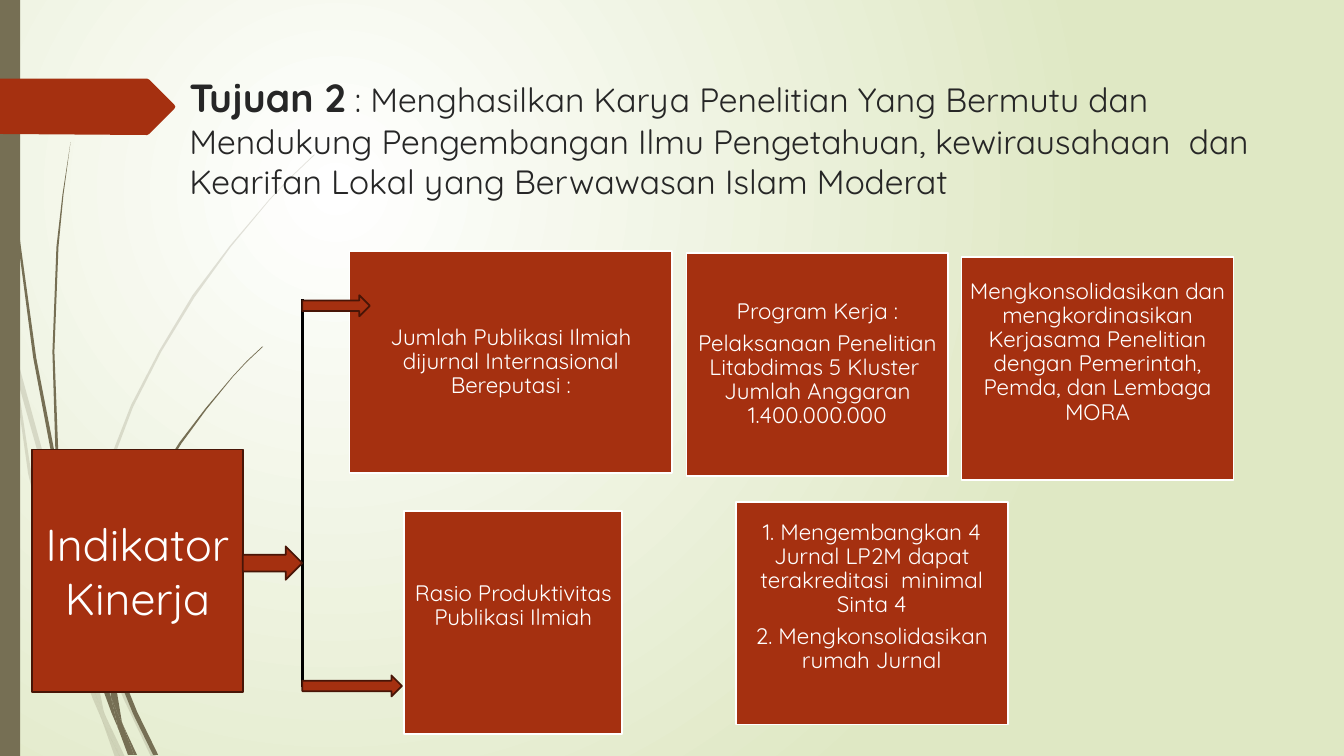
from dataclasses import dataclass

from lxml import etree
from pptx import Presentation
from pptx.dml.color import RGBColor
from pptx.enum.shapes import MSO_CONNECTOR, MSO_SHAPE
from pptx.enum.text import MSO_ANCHOR, MSO_AUTO_SIZE, PP_ALIGN
from pptx.oxml.ns import qn
from pptx.util import Cm, Pt

RECTANGLE, RIGHT_ARROW = MSO_SHAPE.RECTANGLE, MSO_SHAPE.RIGHT_ARROW
STRAIGHT = MSO_CONNECTOR.STRAIGHT
TOP, MIDDLE = MSO_ANCHOR.TOP, MSO_ANCHOR.MIDDLE
LEFT, CENTER = PP_ALIGN.LEFT, PP_ALIGN.CENTER
NO_FIT = MSO_AUTO_SIZE.NONE


@dataclass(frozen=True)
class Theme:
    font: str = "Quicksand"
    rust: RGBColor = RGBColor(0xA5, 0x30, 0x10)
    dark_rust: RGBColor = RGBColor(0x48, 0x15, 0x07)
    olive: RGBColor = RGBColor(0x76, 0x6F, 0x54)
    pale_green: RGBColor = RGBColor(0xDF, 0xE8, 0xC4)
    white: RGBColor = RGBColor(0xFF, 0xFF, 0xFF)
    black: RGBColor = RGBColor(0, 0, 0)
    ink: RGBColor = RGBColor(0x26, 0x26, 0x26)
    goal_size: int = 28
    title_size: int = 24
    root_size: int = 32
    box_size: int = 16


THEME = Theme()
SLIDE_WIDTH, SLIDE_HEIGHT = 33.87, 19.05
BOX_HEIGHT, BOX_INSET, RAISE = 5.61, 0.18, 0.81
SPINE_X, SPINE_TOP, SPINE_BOTTOM = 7.62, 7.54, 17.32

GOAL = "Tujuan 2"
GOAL_TEXT = (" : Menghasilkan Karya Penelitian Yang Bermutu dan Mendukung Pengembangan "
             "Ilmu Pengetahuan, kewirausahaan  dan Kearifan Lokal yang Berwawasan Islam Moderat")
ROOT = "Indikator Kinerja"
ROOT_AREA = (0.81, 11.33, 5.31, 6.1)
TITLE_AREA = (4.52, 1.73, 27.43, 3.56)

INDICATORS = [
    {"left": 8.81, "top": 6.32, "width": 8.13, "raise": 0,
     "lines": ["Jumlah Publikasi Ilmiah dijurnal Internasional Bereputasi :"]},
    {"left": 17.3, "top": 6.38, "width": 6.6, "raise": 0,
     "lines": ["Program Kerja :",
               "Pelaksanaan Penelitian Litabdimas 5 Kluster  Jumlah Anggaran 1.400.000.000"]},
    {"left": 10.19, "top": 12.88, "width": 5.49, "raise": RAISE,
     "lines": ["Rasio Produktivitas Publikasi Ilmiah"]},
    {"left": 24.23, "top": 6.48, "width": 6.86, "raise": RAISE,
     "lines": ["Mengkonsolidasikan dan mengkordinasikan Kerjasama Penelitian "
               "dengan Pemerintah, Pemda, dan Lembaga MORA"]},
    {"left": 18.54, "top": 12.65, "width": 6.86, "raise": RAISE,
     "lines": ["1. Mengembangkan 4 Jurnal LP2M dapat terakreditasi  minimal Sinta 4",
               "2. Mengkonsolidasikan rumah Jurnal"]},
]
ARROWS = [(SPINE_X, 7.44, 1.7, 0.53), (SPINE_X, 17.02, 2.51, 0.53), (6.12, 13.77, 1.5, 0.84)]

GRID = Cm(0.0254)
RIBBON = [(0, 78), (146, 78), (148, 79), (173, 104), (174, 106), (173, 108),
          (148, 133), (146, 134), (0, 133)]
FAINT_GRASS = [
    [(11, 350), (9, 322), (0, 282), (0, 299), (10, 344)],
    [(58, 522), (84, 599), (85, 586), (62, 520), (14, 345), (17, 376)],
    [(92, 607), (88, 596), (88, 610), (123, 694), (150, 751), (155, 751), (127, 692)],
    [(119, 751), (124, 751), (105, 711)],
    [(93, 683), (70, 619), (31, 469), (17, 376), (11, 350), (28, 470), (65, 621),
     (92, 693), (101, 714), (99, 707)],
    [(84, 599), (87, 646), (93, 683), (96, 692), (105, 711), (103, 706), (91, 646),
     (88, 610), (88, 608)],
    [(88, 584), (95, 518), (110, 462), (132, 404), (160, 349), (193, 295), (229, 245),
     (268, 198), (290, 175), (312, 154), (312, 153), (289, 175), (268, 197), (228, 244),
     (191, 293), (158, 348), (130, 402), (107, 461), (91, 518), (85, 584), (85, 586), (88, 596)],
    [(101, 714), (114, 751), (119, 751)],
    [(96, 692), (93, 683), (99, 707), (101, 714), (119, 751), (105, 711)],
]
SOLID_GRASS = [
    [(7, 110), (17, 233), (33, 355), (56, 477), (57, 481), (55, 457), (55, 453), (36, 355),
     (19, 232), (8, 109), (5, 48), (4, 0), (3, 0), (4, 48)],
    [(113, 649), (110, 641), (111, 656), (132, 708), (152, 749), (157, 749), (136, 706)],
    [(110, 691), (98, 657), (72, 556), (64, 505), (57, 477), (68, 557), (93, 659),
     (111, 708), (117, 722), (116, 717)],
    [(60, 472), (58, 453), (54, 349), (58, 245), (63, 193), (70, 141), (62, 193),
     (56, 245), (52, 349), (55, 449)],
    [(133, 749), (136, 749), (122, 719)],
    [(111, 633), (115, 592), (125, 552), (140, 513), (158, 476), (180, 440), (205, 406),
     (231, 374), (245, 359), (261, 344), (260, 344), (245, 358), (231, 373), (204, 405),
     (178, 439), (156, 474), (137, 512), (122, 551), (111, 591), (106, 631), (110, 641)],
    [(117, 722), (127, 749), (131, 749)],
    [(106, 645), (110, 691), (116, 706), (122, 719), (121, 716), (111, 656), (109, 651)],
    [(116, 706), (110, 691), (116, 717), (117, 722), (130, 749), (133, 749), (122, 719)],
]


def paint(shape, fill, outline=None):
    shape.shadow.inherit = False
    shape.fill.solid()
    shape.fill.fore_color.rgb = fill
    if outline is None:
        shape.line.fill.background()
    else:
        shape.line.color.rgb = outline
        shape.line.width = Pt(1.25)


def add_block(shapes, preset, area, fill, outline=None):
    block = shapes.add_shape(preset, *(Cm(length) for length in area))
    paint(block, fill, outline)
    return block


def add_outline(shapes, points, fill):
    builder = shapes.build_freeform(*points[0], scale=GRID)
    builder.add_line_segments(points[1:], close=True)
    outline = builder.convert_to_shape()
    paint(outline, fill)
    return outline


def add_grass(shapes, stems, opacity):
    clump = shapes.add_group_shape()
    for stem in stems:
        blade = add_outline(clump.shapes, stem, THEME.olive)
        color = blade.fill._xPr.find(qn("a:solidFill"))[0]
        etree.SubElement(color, qn("a:alpha"), val=str(opacity * 1000))


def add_run(paragraph, text, size, color, bold=False):
    run = paragraph.add_run()
    run.text = text
    run.font.name = THEME.font
    run.font.size = Pt(size)
    run.font.bold = bold
    run.font.color.rgb = color


def write_lines(block, lines, size):
    frame = block.text_frame
    frame.word_wrap = True
    frame.vertical_anchor = MIDDLE
    for index, line in enumerate(lines):
        paragraph = frame.add_paragraph() if index else frame.paragraphs[0]
        paragraph.alignment = CENTER
        add_run(paragraph, line, size, THEME.white)
    return frame


def add_background(slide):
    fill = slide.background.fill
    fill.gradient()
    for stop, color in zip(fill.gradient_stops, (THEME.white, THEME.pale_green)):
        stop.color.rgb = color
    gradient = slide._element.find(".//" + qn("a:gradFill"))
    gradient.remove(gradient.find(qn("a:lin")))
    circle = etree.SubElement(gradient, qn("a:path"), path="circle")
    etree.SubElement(circle, qn("a:fillToRect"), l="50000", t="50000", r="100000", b="100000")


def add_title(slide):
    title = slide.shapes.title
    title.left, title.top, title.width, title.height = (Cm(length) for length in TITLE_AREA)
    frame = title.text_frame
    frame.word_wrap = True
    frame.auto_size = NO_FIT
    frame.vertical_anchor = TOP
    paragraph = frame.paragraphs[0]
    paragraph.alignment = LEFT
    add_run(paragraph, GOAL, THEME.goal_size, THEME.ink, bold=True)
    add_run(paragraph, GOAL_TEXT, THEME.title_size, THEME.ink)
    slide.shapes._spTree.append(title._element)


def add_indicator(shapes, indicator):
    area = (indicator["left"], indicator["top"], indicator["width"], BOX_HEIGHT)
    box = add_block(shapes, RECTANGLE, area, THEME.rust, THEME.white)
    frame = write_lines(box, indicator["lines"], THEME.box_size)
    frame.margin_left = frame.margin_right = frame.margin_top = Cm(BOX_INSET)
    frame.margin_bottom = Cm(BOX_INSET + indicator["raise"])
    for paragraph in frame.paragraphs:
        paragraph.line_spacing = 0.9
        paragraph.space_after = Pt(5.6)


def add_spine(shapes):
    spine = shapes.add_connector(STRAIGHT, Cm(SPINE_X), Cm(SPINE_TOP), Cm(SPINE_X), Cm(SPINE_BOTTOM))
    spine.line.color.rgb = THEME.black
    spine.line.width = Pt(1.75)
    etree.SubElement(spine._element.spPr, qn("a:effectLst"))


def main():
    deck = Presentation()
    deck.slide_width, deck.slide_height = Cm(SLIDE_WIDTH), Cm(SLIDE_HEIGHT)
    slide = deck.slides.add_slide(deck.slide_layouts[5])
    shapes = slide.shapes
    add_background(slide)
    add_grass(shapes, FAINT_GRASS, 20)
    add_grass(shapes, SOLID_GRASS, 100)
    add_block(shapes, RECTANGLE, (0, 0, 0.51, SLIDE_HEIGHT), THEME.olive)
    add_outline(shapes, RIBBON, THEME.rust)
    add_title(slide)
    for indicator in INDICATORS:
        add_indicator(shapes, indicator)
    root = add_block(shapes, RECTANGLE, ROOT_AREA, THEME.rust, THEME.dark_rust)
    write_lines(root, [ROOT], THEME.root_size)
    add_spine(shapes)
    for area in ARROWS:
        add_block(shapes, RIGHT_ARROW, area, THEME.rust, THEME.dark_rust)
    deck.save("out.pptx")


if __name__ == "__main__":
    main()
